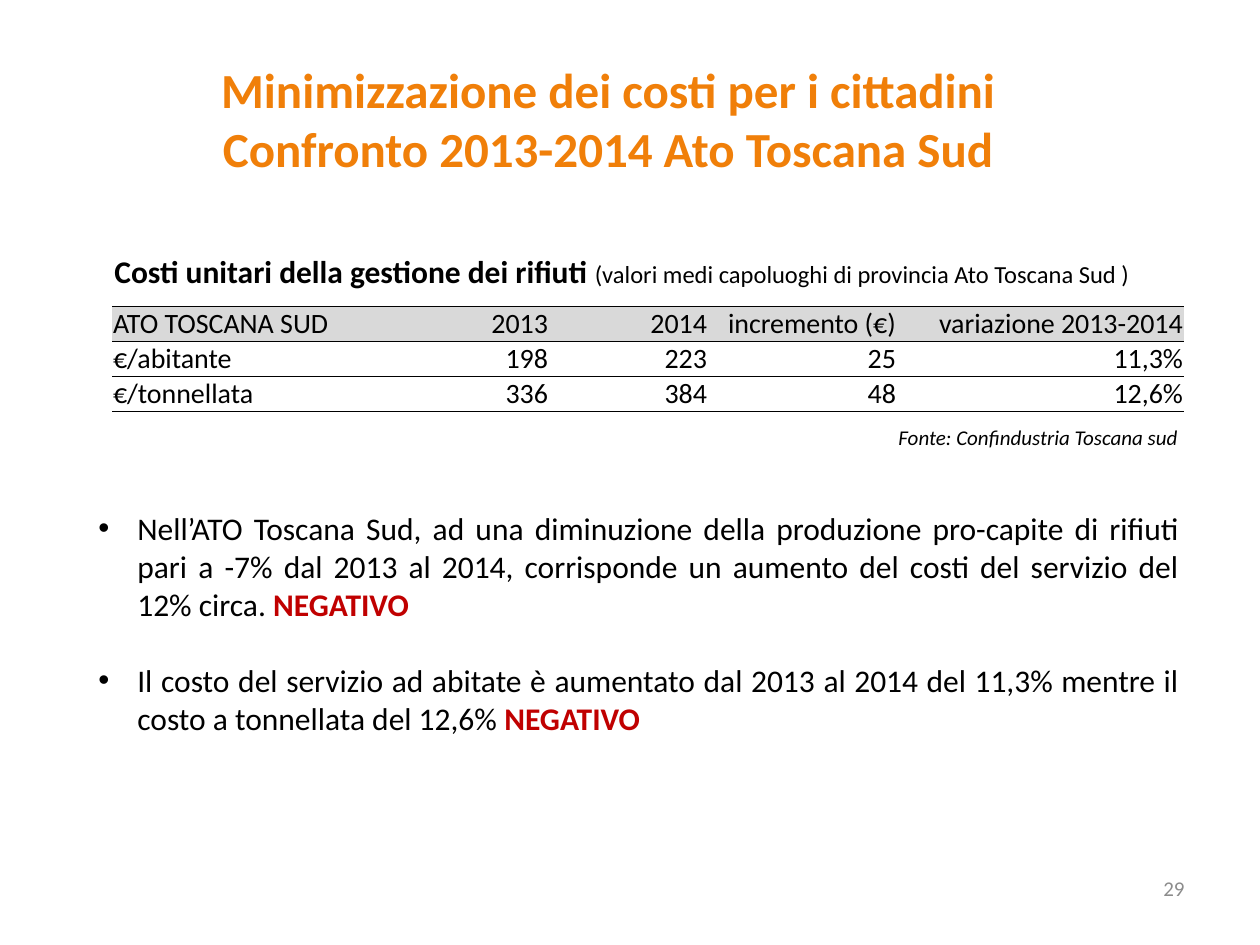
import pptx
import pptx.dml.color
import pptx.enum.text
import pptx.oxml.ns
import pptx.util
from lxml import etree

ALIGN = pptx.enum.text.PP_ALIGN
ANCHOR = pptx.enum.text.MSO_ANCHOR

THEME = {
    "font": "Calibri",
    "color": {"title": "F07F09", "text": "000000", "alert": "C00000",
              "number": "8C8C8C", "header": "D9D9D9", "rule": "000000"},
    "size": {"title": 28, "body": 18, "table": 16, "note": 14, "small": 12},
}

# Content: each paragraph is a list of (text, size, color, style) runs
TITLE = [[("Minimizzazione dei costi per i cittadini", "title", "title", "bold")],
         [("Confronto 2013-2014 Ato Toscana Sud", "title", "title", "bold")]]
CAPTION = [[("Costi unitari della gestione dei rifiuti ", "body", "text", "bold"),
            ("(valori medi capoluoghi di provincia Ato Toscana Sud )", "note", "text", "")]]
COSTS = [
    ["ATO TOSCANA SUD", "2013", "2014", "incremento (€)", "variazione 2013-2014"],
    ["€/abitante", "198", "223", "25", "11,3%"],
    ["€/tonnellata", "336", "384", "48", "12,6%"],
]
SOURCE = [[("Fonte: Confindustria Toscana sud", "small", "text", "italic")]]
VERDICT = ("NEGATIVO", "body", "alert", "bold")
FINDINGS = [
    [("Nell’ATO Toscana Sud, ad una diminuzione della produzione pro-capite di rifiuti "
      "pari a -7% dal 2013 al 2014, corrisponde un aumento del costi del servizio del "
      "12% circa. ", "body", "text", ""), VERDICT],
    [("Il costo del servizio ad abitate è aumentato dal 2013 al 2014 del 11,3% mentre il "
      "costo a tonnellata del 12,6% ", "body", "text", ""), VERDICT],
]
PAGE_NUMBER = [[("29", "small", "number", "")]]

# Layout in px
SLIDE_SIZE = (1260, 945)
TITLE_BOX = (21, 53, 1174, 131)
CAPTION_BOX = (102, 246, 1096, 50)
SOURCE_BOX = (886, 418, 311, 38)
FINDINGS_BOX = (86, 503, 1106, 318)
NUMBER_BOX = (903, 869, 294, 39)
TABLE_ORIGIN = (112, 306)
COLUMN_WIDTHS = [248, 189, 159, 189, 287]
ROW_HEIGHT = 35
BULLET_INDENT = 39
FINDING_GAP = 22  # points


def px(length):
    return pptx.util.Emu(length * 914400 // 126)


def rgb(name):
    return pptx.dml.color.RGBColor.from_string(THEME["color"][name])


def style_font(font, size, color, style=""):
    font.name = THEME["font"]
    font.size = pptx.util.Pt(THEME["size"][size])
    font.color.rgb = rgb(color)
    font.bold = style == "bold"
    font.italic = style == "italic"


def add_text(slide, box, paragraphs, alignment=ALIGN.LEFT, anchor=ANCHOR.TOP, wrap=True):
    text_frame = slide.shapes.add_textbox(*map(px, box)).text_frame
    text_frame.word_wrap = wrap
    text_frame.vertical_anchor = anchor
    for index, runs in enumerate(paragraphs):
        paragraph = text_frame.add_paragraph() if index else text_frame.paragraphs[0]
        paragraph.alignment = alignment
        for text, *look in runs:
            run = paragraph.add_run()
            run.text = text
            style_font(run.font, *look)
    return text_frame


def add_bullet(paragraph):
    properties = paragraph._p.get_or_add_pPr()
    properties.set("marL", str(px(BULLET_INDENT)))
    properties.set("indent", str(-px(BULLET_INDENT)))
    font = etree.SubElement(properties, pptx.oxml.ns.qn("a:buFont"))
    font.set("typeface", "Arial")
    etree.SubElement(properties, pptx.oxml.ns.qn("a:buChar")).set("char", "•")


def rule_cell(cell):
    """Thin rules above and below, none at the sides."""
    qn = pptx.oxml.ns.qn
    properties = cell._tc.get_or_add_tcPr()
    for side in ("L", "R", "T", "B"):
        line = etree.SubElement(properties, qn(f"a:ln{side}"))
        if side in "LR":
            etree.SubElement(line, qn("a:noFill"))
        else:
            line.set("w", str(pptx.util.Pt(0.5)))
            fill = etree.SubElement(line, qn("a:solidFill"))
            etree.SubElement(fill, qn("a:srgbClr")).set("val", THEME["color"]["rule"])


def add_cost_table(slide):
    size = (sum(COLUMN_WIDTHS), ROW_HEIGHT * len(COSTS))
    table = slide.shapes.add_table(len(COSTS), len(COLUMN_WIDTHS),
                                   *map(px, TABLE_ORIGIN + size)).table
    table.first_row = table.horz_banding = False
    for column, width in zip(table.columns, COLUMN_WIDTHS):
        column.width = px(width)
    for row_index, values in enumerate(COSTS):
        table.rows[row_index].height = px(ROW_HEIGHT)
        for column_index, value in enumerate(values):
            cell = table.cell(row_index, column_index)
            cell.margin_left = cell.margin_right = cell.margin_top = px(1)
            cell.margin_bottom = 0
            cell.vertical_anchor = ANCHOR.BOTTOM
            rule_cell(cell)
            if row_index == 0:
                cell.fill.solid()
                cell.fill.fore_color.rgb = rgb("header")
            else:
                cell.fill.background()
            cell.text_frame.text = value
            paragraph = cell.text_frame.paragraphs[0]
            paragraph.alignment = ALIGN.RIGHT if column_index else ALIGN.LEFT
            style_font(paragraph.runs[0].font, "table", "text")


def main():
    presentation = pptx.Presentation()
    presentation.slide_width, presentation.slide_height = map(px, SLIDE_SIZE)
    slide = presentation.slides.add_slide(presentation.slide_layouts[6])

    # Title
    add_text(slide, TITLE_BOX, TITLE, ALIGN.CENTER)

    # Findings
    findings = add_text(slide, FINDINGS_BOX, FINDINGS, ALIGN.JUSTIFY)
    for paragraph in findings.paragraphs:
        add_bullet(paragraph)
    for paragraph in findings.paragraphs[1:]:
        paragraph.space_before = pptx.util.Pt(FINDING_GAP)

    # Cost table with caption and source
    add_text(slide, SOURCE_BOX, SOURCE, wrap=False)
    add_cost_table(slide)
    add_text(slide, CAPTION_BOX, CAPTION)

    # Page number
    add_text(slide, NUMBER_BOX, PAGE_NUMBER, ALIGN.RIGHT, ANCHOR.MIDDLE)

    presentation.save("out.pptx")


if __name__ == "__main__":
    main()
